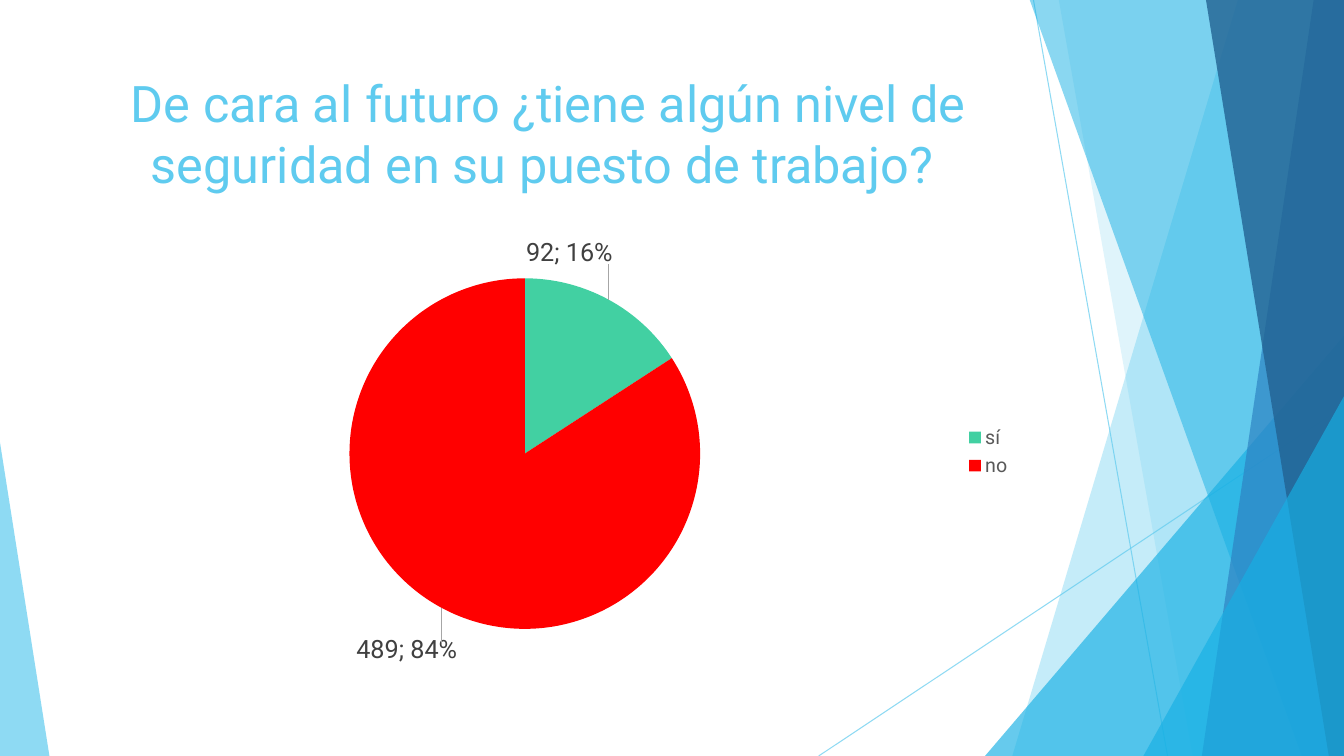
from lxml.etree import SubElement
from pptx import Presentation
from pptx.chart.data import CategoryChartData
from pptx.dml.color import RGBColor
from pptx.enum.chart import XL_CHART_TYPE, XL_LEGEND_POSITION
from pptx.enum.shapes import MSO_CONNECTOR, MSO_SHAPE
from pptx.enum.text import MSO_ANCHOR, PP_ALIGN
from pptx.oxml import parse_xml
from pptx.oxml.ns import nsdecls, qn
from pptx.util import Inches, Pt

W, H = 13.33, 7.5
FONT = "Roboto"
SKY, CYAN, BLUE, NAVY = "5FCBEF", "17B0E4", "2E83C3", "226292"


def paint(fmt, color, alpha=100):
    """Solid colour for a fill, with opacity in percent."""
    fmt.solid()
    fmt.fore_color.rgb = RGBColor.from_string(color)
    if alpha < 100:
        for clr in fmt._xPr.iter(qn("a:srgbClr")):
            SubElement(clr, qn("a:alpha")).set("val", str(alpha * 1000))


def finish(sp, color, alpha):
    """Flat translucent shape without outline or shadow."""
    paint(sp.fill, color, alpha)
    sp.line.fill.background()
    sp.shadow.inherit = False


prs = Presentation()
prs.slide_width, prs.slide_height = Inches(W), Inches(H)
s = prs.slides.add_slide(prs.slide_layouts[6])

# Thin crossing lines
for x1, y1, x2, y2 in [(10.25, 0, 11.58, H), (W, 4.03, 8.12, H)]:
    ln = s.shapes.add_connector(MSO_CONNECTOR.STRAIGHT, Inches(x1), Inches(y1), Inches(x2), Inches(y2))
    ln.line.width = Pt(0.75)
    paint(ln.line.fill, SKY, 70)
    SubElement(ln._element.spPr, qn("a:effectLst"))

# Facets: bands run from a top x to a bottom x and reach the right edge;
# triangles stand on the bottom edge with their tip on the right or left
facets = [
    ("band", 12.28, 10.04, SKY, 36),
    ("band", 10.5, 11.83, SKY, 20),
    ("right", 9.77, 3.33, CYAN, 66),
    ("band", 10.21, 12.91, CYAN, 50),
    ("band", 13.03, 11.92, BLUE, 70),
    ("band", 11.96, 13.18, NAVY, 80),
    ("right", 11.34, 3.93, CYAN, 66),
    ("left", 0.49, 4.39, SKY, 70),
]
for kind, a, b, color, alpha in facets:
    if kind == "band":
        fb = s.shapes.build_freeform(Inches(a), Inches(-0.01), scale=1.0)
        corners = [(W, -0.01), (W, H), (b, H)]
        fb.add_line_segments([(Inches(x), Inches(y)) for x, y in corners], close=True)
        sp = fb.convert_to_shape()
    else:
        left, right = (a, W) if kind == "right" else (0, a)
        sp = s.shapes.add_shape(MSO_SHAPE.ISOSCELES_TRIANGLE, Inches(left), Inches(b),
                                Inches(right - left), Inches(H - b))
        sp.adjustments[0] = 1 if kind == "right" else 0
    finish(sp, color, alpha)

# Title
tb = s.shapes.add_textbox(Inches(0.74), Inches(0.67), Inches(9.4), Inches(1.44))
tf = tb.text_frame
tf.word_wrap = True
tf.vertical_anchor = MSO_ANCHOR.TOP
p = tf.paragraphs[0]
p.alignment = PP_ALIGN.CENTER
r = p.add_run()
r.text = "De cara al futuro ¿tiene algún nivel de seguridad en su puesto de trabajo? "
r.font.size, r.font.name = Pt(36), FONT
paint(r.font.fill, SKY)

# Pie chart
data = CategoryChartData()
data.categories = ["sí", "no"]
data.add_series("Series 1", (92, 489))
chart = s.shapes.add_chart(XL_CHART_TYPE.PIE, Inches(0.74), Inches(2.36), Inches(9.4), Inches(4.24), data).chart
chart.has_title = False
chart.font.size, chart.font.name = Pt(18), FONT
chart.has_legend = True
chart.legend.position = XL_LEGEND_POSITION.RIGHT
chart.legend.include_in_layout = False
chart.legend.font.size, chart.legend.font.name = Pt(14), FONT
paint(chart.legend.font.fill, "595959")
plot = chart.plots[0]
plot.vary_by_categories = True
ser = plot.series[0]
for i, color in enumerate(["42D0A2", "FF0000"]):
    paint(ser.points[i].format.fill, color)

# Fixed place of the pie, as shares of the chart
area = chart._chartSpace.chart.plotArea
for old in area.findall(qn("c:layout")):
    area.remove(old)
area.insert(0, parse_xml(
    f'<c:layout {nsdecls("c")}><c:manualLayout><c:layoutTarget val="inner"/>'
    '<c:xMode val="edge"/><c:yMode val="edge"/><c:x val="0.29"/><c:y val="0.09"/>'
    '<c:w val="0.37"/><c:h val="0.83"/></c:manualLayout></c:layout>'))

# Labels: value and percent, moved off the pie with leader lines
style = (f'<c:spPr><a:noFill/><a:ln><a:noFill/></a:ln></c:spPr><c:txPr><a:bodyPr/><a:p><a:pPr><a:defRPr sz="1800">'
         f'<a:solidFill><a:srgbClr val="404040"/></a:solidFill><a:latin typeface="{FONT}"/>'
         '</a:defRPr></a:pPr><a:endParaRPr lang="es-ES"/></a:p></c:txPr>')
show = ('<c:dLblPos val="bestFit"/><c:showLegendKey val="0"/><c:showVal val="1"/><c:showCatName val="0"/>'
        '<c:showSerName val="0"/><c:showPercent val="1"/><c:showBubbleSize val="0"/><c:separator>; </c:separator>')
moved = "".join(
    f'<c:dLbl><c:idx val="{i}"/><c:layout><c:manualLayout><c:x val="{dx}"/><c:y val="{dy}"/>'
    f'</c:manualLayout></c:layout>{style}{show}</c:dLbl>'
    for i, (dx, dy) in enumerate([(-0.09, -0.07), (0.02, 0.07)]))
labels = parse_xml(
    f'<c:dLbls {nsdecls("c", "a")}>{moved}{style}{show}<c:showLeaderLines val="1"/><c:leaderLines><c:spPr>'
    '<a:ln w="9525"><a:solidFill><a:srgbClr val="A6A6A6"/></a:solidFill></a:ln></c:spPr></c:leaderLines></c:dLbls>')
ser._element.find(qn("c:cat")).addprevious(labels)

prs.save("out.pptx")
